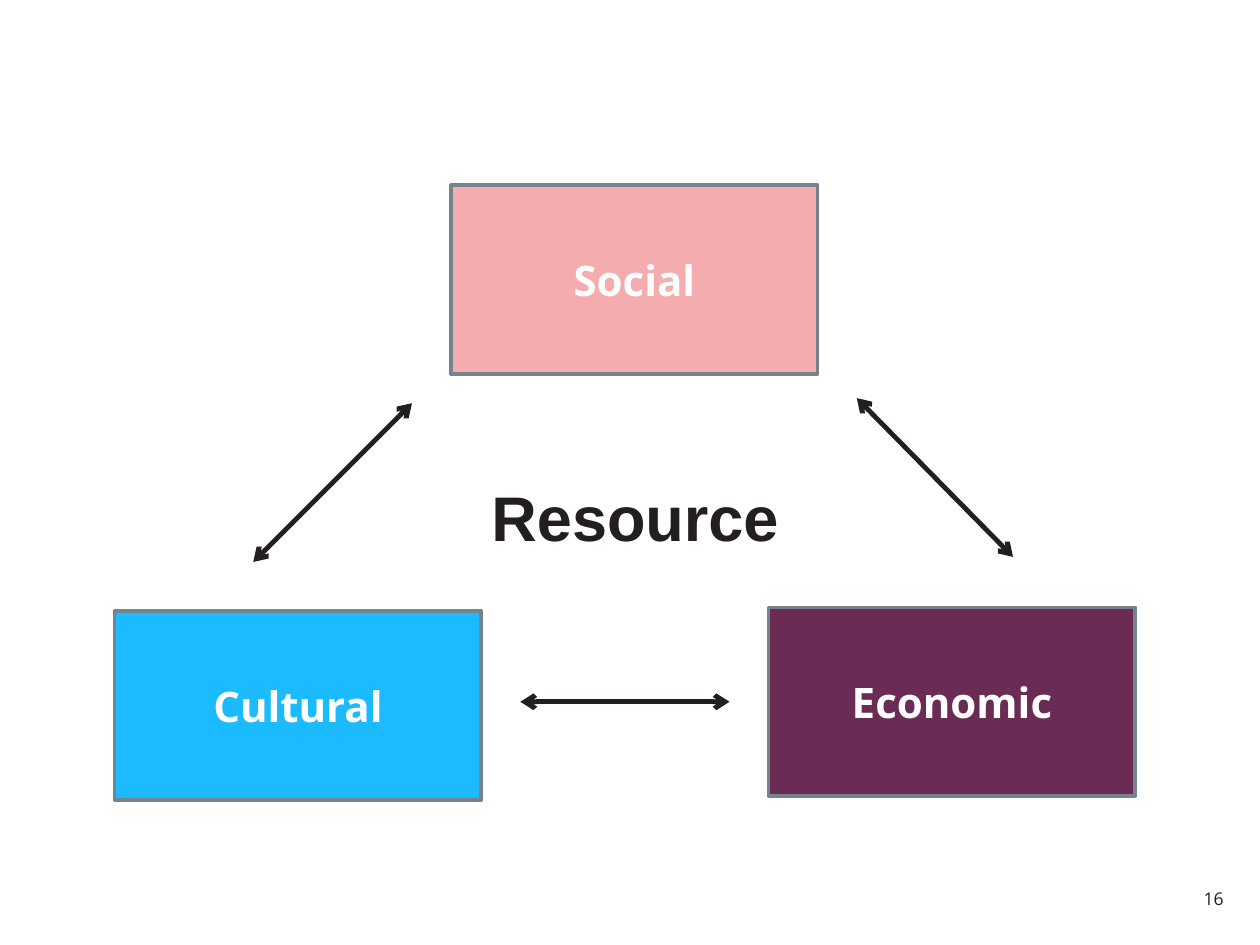
"""Build a slide with three kinds of resource linked in a triangle."""
import pptx
import pptx.dml.color
import pptx.enum.shapes
import pptx.enum.text
import pptx.oxml.ns
import pptx.util
from lxml import etree

RGBColor = pptx.dml.color.RGBColor
INK = RGBColor(0x23, 0x1F, 0x20)
WHITE = RGBColor(0xFF, 0xFF, 0xFF)
BORDER = RGBColor(0x76, 0x83, 0x8C)
PLUM = RGBColor(0x6A, 0x2B, 0x54)
PINK = RGBColor(0xF5, 0xAC, 0xAF)
SKY = RGBColor(0x1C, 0xBA, 0xFF)

ALIGN = pptx.enum.text.PP_ALIGN
ANCHOR = pptx.enum.text.MSO_ANCHOR

deck = pptx.Presentation()
deck.slide_width = pptx.util.Inches(10)
deck.slide_height = pptx.util.Inches(7.5)
slide = deck.slides.add_slide(deck.slide_layouts[5])


def place(*inches):
    """Turn lengths in inches into slide units."""
    return [pptx.util.Inches(length) for length in inches]


def write(frame, text, *, size, font="Open Sans", color=INK, bold=False,
          align=ALIGN.CENTER, anchor=ANCHOR.TOP):
    """Fill a text frame with one formatted paragraph."""
    frame.word_wrap = True
    frame.auto_size = pptx.enum.text.MSO_AUTO_SIZE.NONE
    frame.vertical_anchor = anchor
    paragraph = frame.paragraphs[0]
    paragraph.alignment = align
    run = paragraph.add_run()
    run.text = text
    run.font.name = font
    run.font.size = pptx.util.Pt(size)
    run.font.bold = bold
    run.font.color.rgb = color


page_number = slide.shapes.add_textbox(*place(9.02, 7, 0.79, 0.27))
write(page_number.text_frame, "16", size=10, align=ALIGN.RIGHT)

for label, left, top, fill in (
    ("Economic", 6.1, 4.82, PLUM),
    ("Social", 3.58, 1.47, PINK),
    ("Cultural", 0.91, 4.85, SKY),
):
    resource = slide.shapes.add_shape(
        pptx.enum.shapes.MSO_SHAPE.RECTANGLE, *place(left, top, 2.91, 1.5))
    resource.shadow.inherit = False
    resource.fill.solid()
    resource.fill.fore_color.rgb = fill
    resource.line.color.rgb = BORDER
    resource.line.width = pptx.util.Pt(2)
    write(resource.text_frame, label, size=24, color=WHITE, bold=True,
          anchor=ANCHOR.MIDDLE)

heading = slide.shapes.title
heading.left, heading.top, heading.width, heading.height = place(3.07, 3.75, 3.94, 0.71)
write(heading.text_frame, "Resource", size=36, font="Arial", bold=True)

for ends in (
    (2.01, 4.46, 3.27, 3.2),
    (4.13, 5.57, 5.79, 5.57),
    (8.04, 4.42, 6.8, 3.16),
):
    exchange = slide.shapes.add_connector(
        pptx.enum.shapes.MSO_CONNECTOR.STRAIGHT, *place(*ends))
    exchange.line.color.rgb = INK
    exchange.line.width = pptx.util.Pt(2.75)
    outline = exchange.line._get_or_add_ln()
    for tip in ("a:headEnd", "a:tailEnd"):
        etree.SubElement(outline, pptx.oxml.ns.qn(tip), type="arrow")
    etree.SubElement(exchange._element.spPr, pptx.oxml.ns.qn("a:effectLst"))

deck.save("out.pptx")
